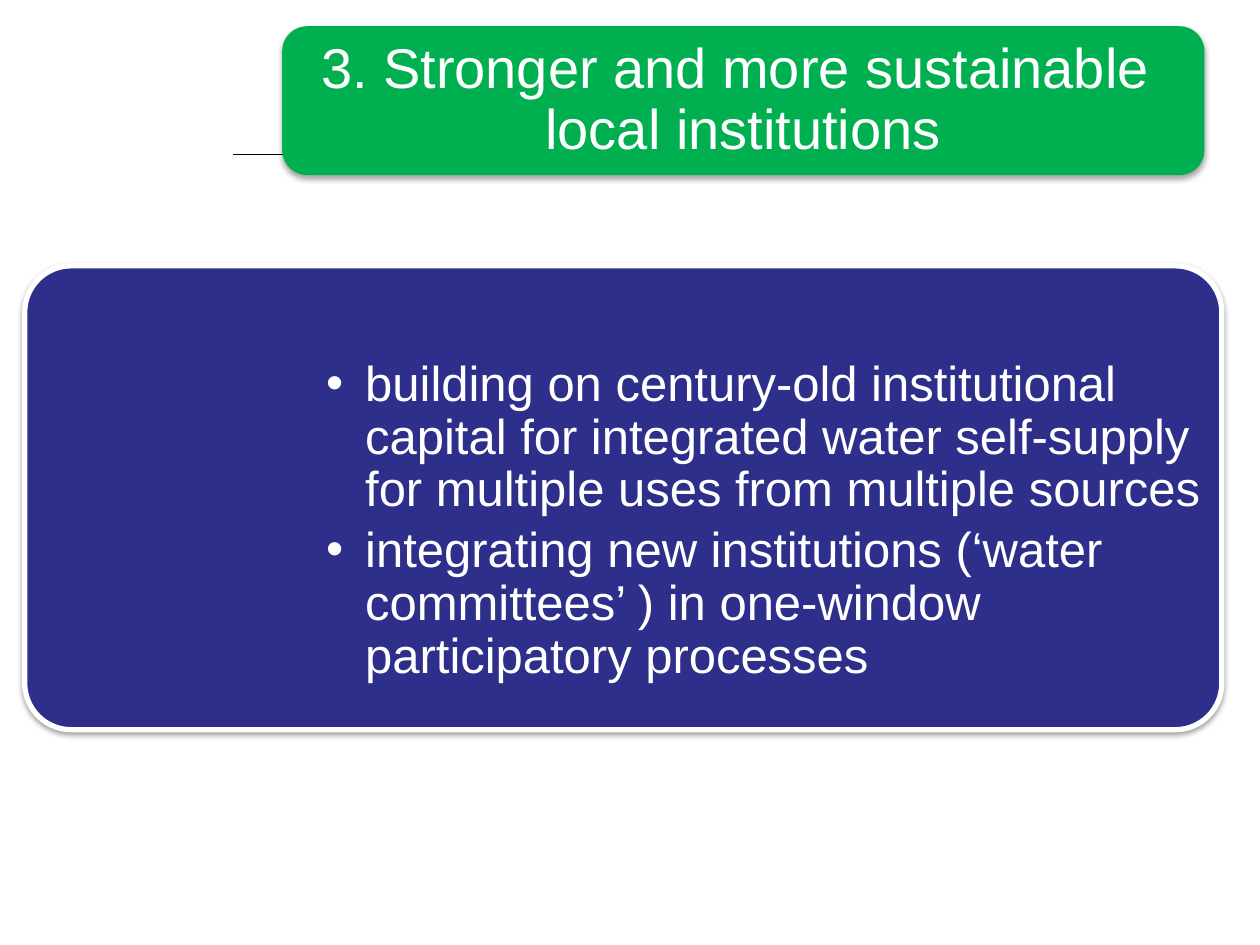
from dataclasses import dataclass

from lxml.etree import SubElement
from pptx import Presentation
from pptx.dml.color import RGBColor
from pptx.enum.shapes import MSO_CONNECTOR as Connector, MSO_SHAPE as Shape
from pptx.enum.text import MSO_ANCHOR as Anchor, MSO_AUTO_SIZE as AutoSize, PP_ALIGN as Align
from pptx.oxml.ns import qn
from pptx.util import Cm, Pt


@dataclass(frozen=True)
class Theme:
    font: str = "Arial"
    title_size: float = 32
    body_size: float = 28
    white: RGBColor = RGBColor(0xFF, 0xFF, 0xFF)
    black: RGBColor = RGBColor(0, 0, 0)
    green: RGBColor = RGBColor(0x00, 0xB0, 0x50)
    navy: RGBColor = RGBColor(0x2E, 0x2E, 0x8B)


THEME = Theme()
TITLE_LINES = ["3. Stronger and more sustainable ", "local institutions"]
POINTS = [
    "building on century-old institutional capital for integrated water "
    "self-supply for multiple uses from multiple sources",
    "integrating new institutions (‘water committees’ ) in one-window "
    "participatory processes",
]
TITLE_AREA = (Cm(5.69), Cm(0.53), Cm(18.59), Cm(3))
PANEL_AREA = (Cm(0.5), Cm(5.36), Cm(24.13), Cm(9.35))


def add_shadow(shape, distance, opacity):
    """Give the shape a soft shadow that falls straight down."""
    effects = SubElement(shape.element.spPr, qn("a:effectLst"))
    shadow = SubElement(effects, qn("a:outerShdw"), blurRad=str(Pt(3.1)),
                        dist=str(Pt(distance)), dir="5400000", rotWithShape="0")
    color = SubElement(shadow, qn("a:srgbClr"), val=str(THEME.black))
    SubElement(color, qn("a:alpha"), val=str(opacity * 1000))


def add_rounded_box(page, area, fill, corner, distance, opacity, border=None):
    box = page.shapes.add_shape(Shape.ROUNDED_RECTANGLE, *area)
    box.adjustments[0] = corner
    box.fill.solid()
    box.fill.fore_color.rgb = fill
    if border:
        box.line.color.rgb = THEME.white
        box.line.width = Pt(border)
    else:
        box.line.fill.background()
    add_shadow(box, distance, opacity)
    return box


def add_rule(page, left, right, top):
    rule = page.shapes.add_connector(Connector.STRAIGHT, left, top, right, top)
    rule.line.color.rgb = THEME.black
    rule.line.width = Pt(0.75)
    SubElement(rule.element.spPr, qn("a:effectLst"))


def set_frame(frame, anchor, left, top, right, bottom):
    frame.word_wrap = True
    frame.auto_size = AutoSize.NONE
    frame.vertical_anchor = anchor
    frame.margin_left, frame.margin_top = left, top
    frame.margin_right, frame.margin_bottom = right, bottom


def add_bullet(para, indent):
    props = para._p.get_or_add_pPr()
    props.set("marL", str(indent))
    props.set("indent", str(-indent))
    SubElement(props, qn("a:buFont"), typeface=THEME.font)
    SubElement(props, qn("a:buChar"), char="•")


def write_lines(para, lines, *, size, align=Align.LEFT, after=0):
    para.alignment = align
    para.line_spacing = 0.9
    para.space_before = Pt(0)
    para.space_after = Pt(after)
    for number, line in enumerate(lines):
        if number:
            para.add_line_break()
        span = para.add_run()
        span.text = line
        span.font.name = THEME.font
        span.font.size = Pt(size)
        span.font.color.rgb = THEME.white


def add_title(page):
    add_rounded_box(page, TITLE_AREA, THEME.green, 0.167, 1.8, 35)
    title = page.shapes.title
    title.left, title.top, title.width, title.height = TITLE_AREA
    title.element.getparent().append(title.element)  # in front of the green box
    set_frame(title.text_frame, Anchor.MIDDLE, *[Cm(0.33)] * 4)
    write_lines(title.text_frame.paragraphs[0], TITLE_LINES,
                size=THEME.title_size, align=Align.CENTER)


def add_panel(page):
    panel = add_rounded_box(page, PANEL_AREA, THEME.navy, 0.1, 1.6, 38, border=3)
    frame = panel.text_frame
    set_frame(frame, Anchor.TOP, Cm(5.8), Cm(1.6), Cm(0.03), Cm(0.03))
    for number, point in enumerate(POINTS):
        para = frame.add_paragraph() if number else frame.paragraphs[0]
        write_lines(para, [point], size=THEME.body_size, after=4.2)
        add_bullet(para, Cm(0.79))


def main():
    deck = Presentation()
    deck.slide_width, deck.slide_height = Cm(25.4), Cm(19.05)
    page = deck.slides.add_slide(deck.slide_layouts[5])
    add_rule(page, Cm(4.7), Cm(23.29), Cm(3.12))
    add_panel(page)
    add_title(page)
    deck.save("out.pptx")


if __name__ == "__main__":
    main()
